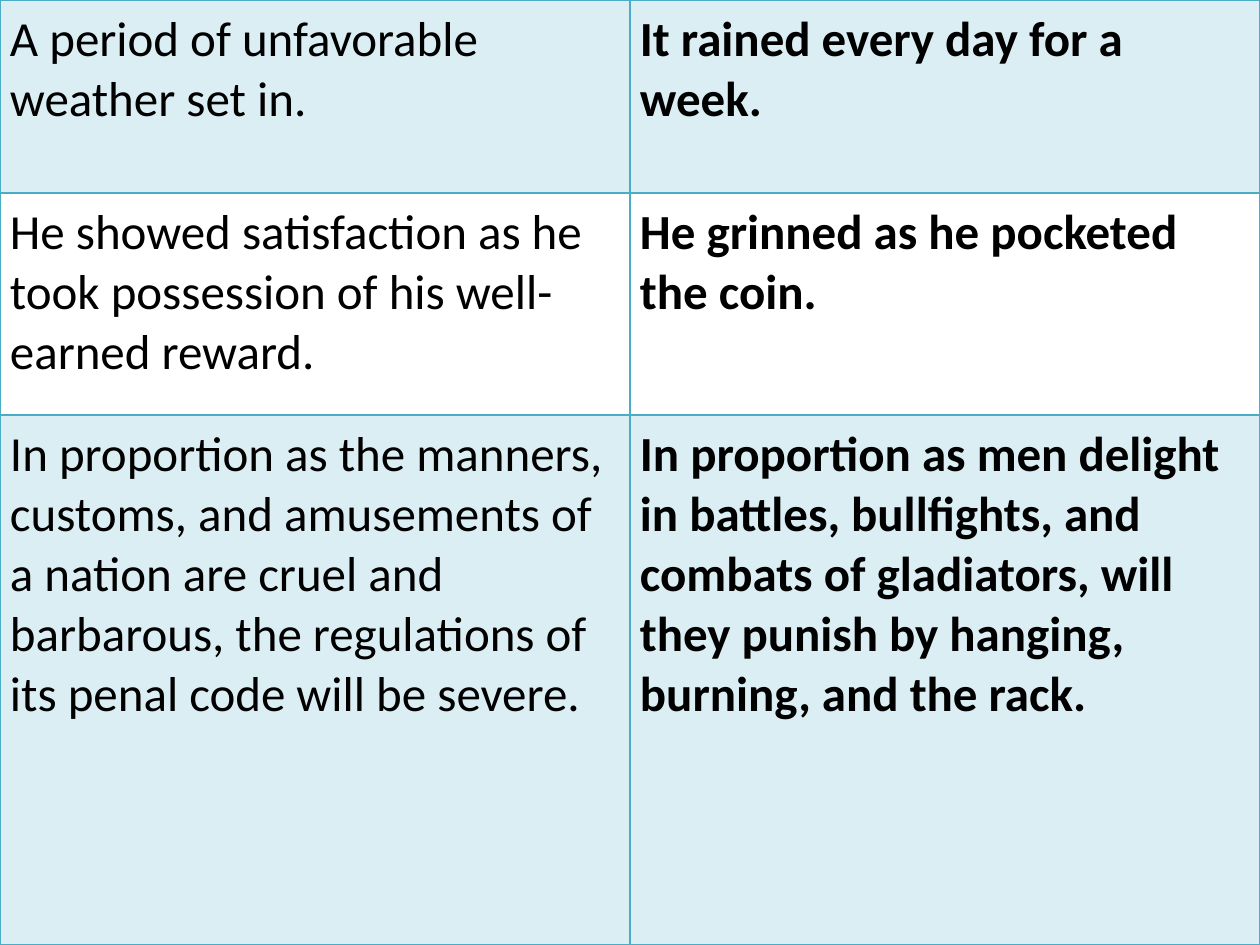
from dataclasses import dataclass

from lxml import etree
from pptx import Presentation
from pptx.dml.color import RGBColor
from pptx.oxml.ns import qn
from pptx.table import Table, _Cell
from pptx.util import Pt

SCALE = 914400 / 126
WIDE, HIGH = 1260, 945
PAD = 10
FONT = "Calibri"
SIZE = 28
BLACK = "000000"
TEAL = "4BACC6"
TINT = 20
SIDES = ("a:lnL", "a:lnR", "a:lnT", "a:lnB")


@dataclass
class Row:
    high: int
    vague: str
    vivid: str
    shade: bool


ROWS = [
    Row(193, "A period of unfavorable weather set in.",
        "It rained every day for a week.", True),
    Row(222, "He showed satisfaction as he took possession of his "
        "well-earned reward.",
        "He grinned as he pocketed the coin.", False),
    Row(530, "In proportion as the manners, customs, and amusements of a "
        "nation are cruel and barbarous, the regulations of its penal code "
        "will be severe.",
        "In proportion as men delight in battles, bullfights, and combats of "
        "gladiators, will they punish by hanging, burning, and the rack.",
        True),
]


def px(count: int) -> int:
    return round(count * SCALE)


def color(code: str) -> RGBColor:
    return RGBColor.from_string(code)


def set_edges(cell: _Cell) -> None:
    props = cell._tc.get_or_add_tcPr()
    for side in SIDES:
        line = etree.SubElement(props, qn(side), w=str(Pt(1)))
        fill = etree.SubElement(line, qn("a:solidFill"))
        etree.SubElement(fill, qn("a:srgbClr"), val=TEAL)


def set_fill(cell: _Cell, shade: bool) -> None:
    if not shade:
        cell.fill.background()
        return
    cell.fill.solid()
    cell.fill.fore_color.rgb = color(TEAL)
    tone = cell._tc.tcPr.find(qn("a:solidFill")).find(qn("a:srgbClr"))
    etree.SubElement(tone, qn("a:alpha"), val=str(TINT * 1000))


def set_text(cell: _Cell, text: str, bold: bool) -> None:
    cell.margin_left = cell.margin_right = px(PAD)
    cell.margin_top = cell.margin_bottom = px(PAD)
    cell.text_frame.text = text
    font = cell.text_frame.paragraphs[0].runs[0].font
    font.name = FONT
    font.size = Pt(SIZE)
    font.bold = bold
    font.color.rgb = color(BLACK)


def draw_row(table: Table, index: int, row: Row) -> None:
    table.rows[index].height = px(row.high)
    for col, text in enumerate((row.vague, row.vivid)):
        cell = table.cell(index, col)
        set_text(cell, text, col == 1)
        set_edges(cell)
        set_fill(cell, row.shade)


def main() -> None:
    deck = Presentation()
    deck.slide_width = px(WIDE)
    deck.slide_height = px(HIGH)
    slide = deck.slides.add_slide(deck.slide_layouts[6])
    table = slide.shapes.add_table(
        len(ROWS), 2, 0, 0, px(WIDE), px(HIGH)).table
    table.first_row = False
    table.horz_banding = False
    for index, row in enumerate(ROWS):
        draw_row(table, index, row)
    deck.save("out.pptx")


if __name__ == "__main__":
    main()
